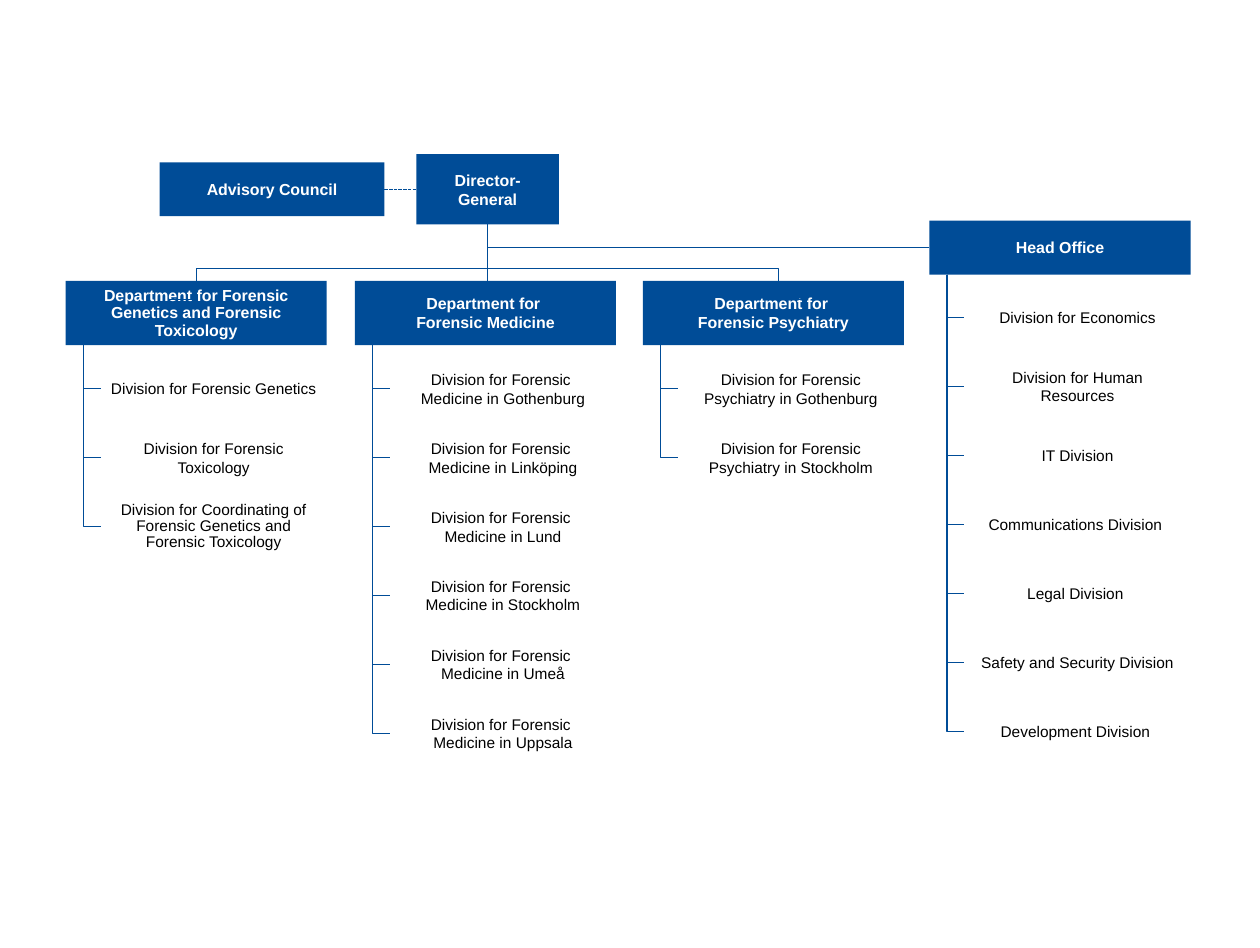
"""Build the organisation chart of a forensic agency."""
from lxml import etree
from pptx import Presentation
from pptx.dml.color import RGBColor
from pptx.enum.dml import MSO_LINE
from pptx.enum.shapes import MSO_CONNECTOR, MSO_SHAPE
from pptx.enum.text import MSO_ANCHOR, PP_ALIGN
from pptx.oxml.ns import qn
from pptx.util import Pt

CHIEF = ("Director-General", 261.5, 96.8, 89.5, 44.2)
COUNCIL = ("Advisory Council", 100.3, 102, 141.1, 33.8)
TOWNS = ["Gothenburg", "Linköping", "Lund", "Stockholm", "Umeå", "Uppsala"]
OFFICE = (
    "Head Office", 583.7, 138.5, 34, 199.5,
    ["Division for Economics", "Division for Human Resources",
     "IT Division", "Communications Division ", "Legal Division ",
     "Safety and Security Division", "Development Division "])
GROUPS = [
    ("Department for Forensic Genetics and Forensic Toxicology",
     41.2, 176.5, 40.3, 244.2,
     ["Division for Forensic Genetics", "Division for Forensic Toxicology",
      "Division for Coordinating of Forensic Genetics and Forensic Toxicology"]),
    ("Department for \nForensic Medicine", 222.9, 176.5, 40.3, 244.2,
     [f"Division for Forensic \nMedicine in {town}" for town in TOWNS]),
    ("Department for \nForensic Psychiatry", 403.7, 176.5, 40.3, 244.2,
     [f"Division for Forensic Psychiatry in {town}"
      for town in ("Gothenburg", "Stockholm")]),
]
TIGHT = {GROUPS[0][0]: 11, GROUPS[0][-1][-1]: 10}

BLUE = RGBColor(0x00, 0x4C, 0x97)
WHITE = RGBColor(0xFF, 0xFF, 0xFF)
BLACK = RGBColor(0x00, 0x00, 0x00)
RECT = MSO_SHAPE.RECTANGLE
STRAIGHT = MSO_CONNECTOR.STRAIGHT
ELBOW = MSO_CONNECTOR.ELBOW
DASH = MSO_LINE.SQUARE_DOT
CENTER = PP_ALIGN.CENTER
MIDDLE = MSO_ANCHOR.MIDDLE

WIDTH, ITEM_H, STEP = 164, 33.8, 43.3
RAIL, INDENT = 11, 22
BUS_Y, BUS_END, REACH = 168.6, 188, 201

deck = Presentation()
deck.slide_width, deck.slide_height = Pt(791.28), Pt(595.44)
slide = deck.slides.add_slide(deck.slide_layouts[6])


def add_box(text, x, y, w, h, head=True):
    box = slide.shapes.add_shape(RECT, Pt(x), Pt(y), Pt(w), Pt(h))
    box.shadow.inherit = False
    box.fill.solid()
    box.fill.fore_color.rgb = BLUE if head else WHITE
    box.line.fill.background()
    frame = box.text_frame
    frame.word_wrap = True
    frame.vertical_anchor = MIDDLE
    frame.margin_left = frame.margin_right = Pt(7.2 if head else 5.76)
    para = frame.paragraphs[0]
    para.text = text.replace("\n", "\v")
    para.alignment = CENTER
    if text in TIGHT:
        para.line_spacing = Pt(TIGHT[text])
    font = para.font
    font.name, font.bold = "Arial", head
    font.size = Pt(10 if head else 9.7)
    font.color.rgb = WHITE if head else BLACK
    return box


def add_line(x1, y1, x2, y2, kind=STRAIGHT):
    line = slide.shapes.add_connector(kind, Pt(x1), Pt(y1), Pt(x2), Pt(y2))
    line.line.color.rgb = BLUE
    line.line.width = Pt(0.75)
    etree.SubElement(line._element.spPr, qn("a:effectLst"))
    return line


def add_hook(x, y, w, h):
    """Draw a line down by h, then right by w, as a turned elbow."""
    mid_x, mid_y = x + w / 2, y + h / 2
    hook = add_line(mid_x + h / 2, mid_y - w / 2,
                    mid_x - h / 2, mid_y + w / 2, ELBOW)
    props = hook._element.spPr
    props.find(qn("a:xfrm")).set("rot", "16200000")
    props.find(qn("a:prstGeom")).set("prst", "bentConnector2")


def add_branch(x, reach):
    """Draw a line sideways from the trunk, then down into a department."""
    branch = add_line(x, BUS_Y, x + reach, BUS_END, ELBOW)
    shape = branch._element.spPr.find(qn("a:prstGeom"))
    guides = shape.find(qn("a:avLst"))
    if guides is None:
        guides = etree.SubElement(shape, qn("a:avLst"))
    etree.SubElement(guides, qn("a:gd"), name="adj1", fmla="val 90900")


def add_group(title, x, y, h, first, items):
    head = add_box(title, x, y, WIDTH, h)
    for i, text in enumerate(items):
        mid = first + STEP * i
        add_box(text, x + INDENT, mid - ITEM_H / 2, WIDTH - INDENT, ITEM_H, False)
    for i in range(len(items)):
        add_hook(x + RAIL, y + h, INDENT - RAIL, first + STEP * i - y - h)
    return head


chief = add_box(*CHIEF)
council = add_box(*COUNCIL)
office = add_group(*OFFICE)
for group in GROUPS:
    add_group(*group)

trunk = CHIEF[1] + CHIEF[3] / 2
base = CHIEF[2] + CHIEF[4]
side_y = OFFICE[2] + OFFICE[3] / 2
link_y = CHIEF[2] + CHIEF[4] / 2

link = add_line(COUNCIL[1] + COUNCIL[3], link_y, CHIEF[1], link_y)
link.line.dash_style = DASH
link.begin_connect(council, 3)
link.end_connect(chief, 1)
add_line(trunk, base, trunk, GROUPS[0][2]).begin_connect(chief, 2)
add_line(trunk, side_y, OFFICE[1], side_y).end_connect(office, 1)
for reach in (-REACH, REACH):
    add_branch(trunk, reach)

deck.save("out.pptx")
